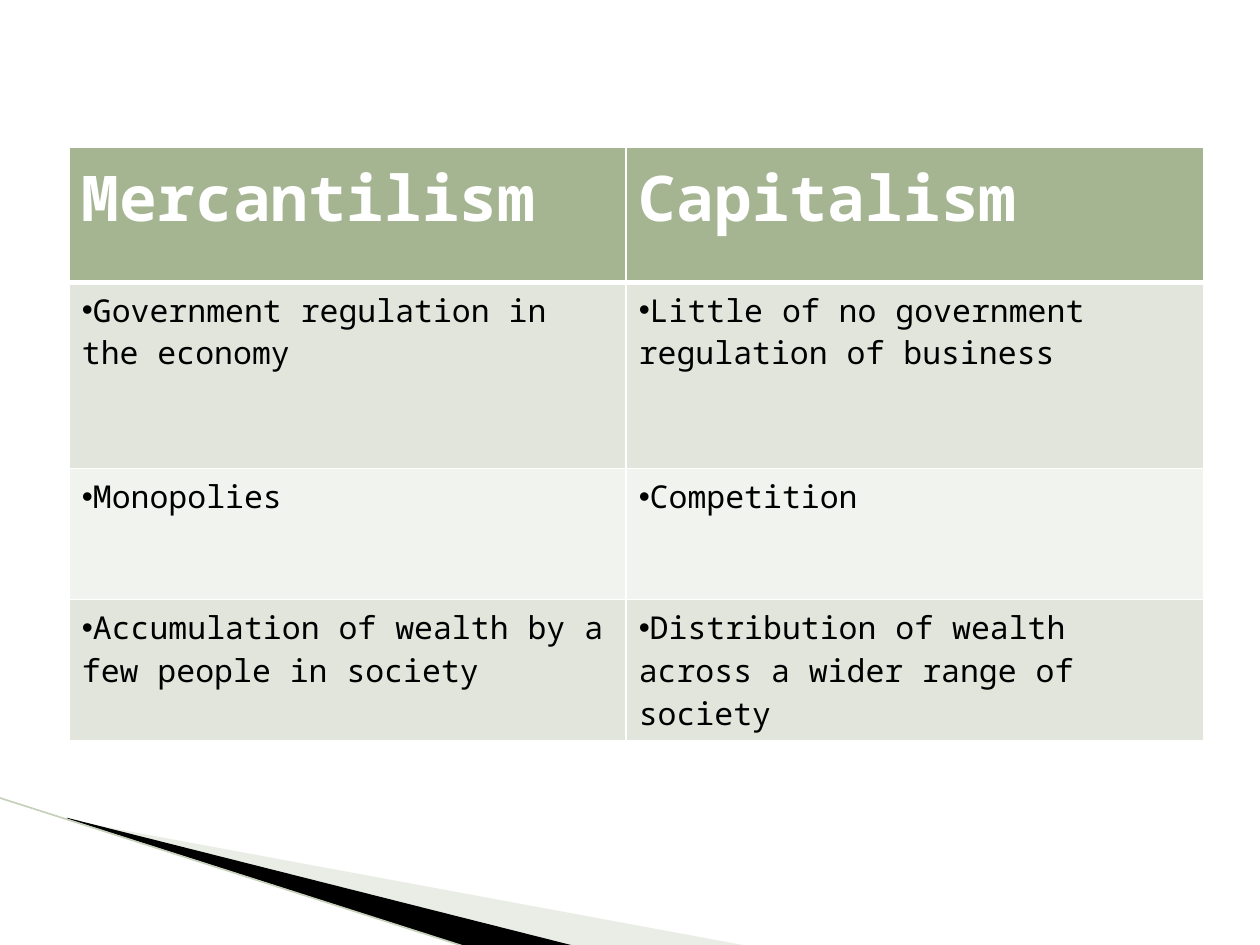
from dataclasses import dataclass

import pptx
import pptx.dml.color
import pptx.enum.shapes
import pptx.oxml
import pptx.oxml.ns
import pptx.util
from lxml import etree

PX = 9144  # EMU in one px, 100 px to the inch


@dataclass(frozen=True)
class Theme:
    font: str = "Noto Sans Mono"
    heading_size: int = 36
    body_size: int = 18
    heading_text: str = "FFFFFF"
    body_text: str = "000000"
    heading_fill: str = "A5B592"
    odd_fill: str = "E1E5DC"
    even_fill: str = "F0F3EE"
    border: str = "FFFFFF"
    pale_wedge: str = "CBD4C0"
    dark_wedge: str = "000000"
    edge: str = "C6D0BB"


@dataclass(frozen=True)
class Wedge:
    points: tuple[tuple[int, int], ...]
    color: str
    opacity: int = 100


@dataclass(frozen=True)
class Row:
    height: int
    mercantilism: str
    capitalism: str


THEME = Theme()
WEDGES = (
    Wedge(((55, 651), (595, 751), (456, 751), (55, 650)), THEME.pale_wedge, 40),
    Wedge(((53, 649), (457, 751), (372, 752), (54, 650)), THEME.dark_wedge),
)
COLUMN_WIDTHS = (442, 458)
ROWS = (
    Row(107, "Mercantilism", "Capitalism"),
    Row(148, "Government regulation in the economy",
        "Little of no government regulation of business"),
    Row(104, "Monopolies", "Competition"),
    Row(104, "Accumulation of wealth by a few people in society",
        "Distribution of wealth across a wider range of society"),
)


def px(length: int) -> pptx.util.Emu:
    return pptx.util.Emu(length * PX)


def rgb(color: str) -> pptx.dml.color.RGBColor:
    return pptx.dml.color.RGBColor.from_string(color)


def add_child(parent, tag: str, **attributes: str):
    return etree.SubElement(parent, pptx.oxml.ns.qn(tag), attributes)


def draw_wedge(slide, wedge: Wedge) -> None:
    first, *others = wedge.points
    builder = slide.shapes.build_freeform(*first, scale=PX)
    builder.add_line_segments(others, close=True)
    outline = builder.convert_to_shape()
    outline.shadow.inherit = False
    outline.line.fill.background()
    outline.fill.solid()
    outline.fill.fore_color.rgb = rgb(wedge.color)
    if wedge.opacity < 100:
        color = outline.fill._xPr.find(".//" + pptx.oxml.ns.qn("a:srgbClr"))
        add_child(color, "a:alpha", val=str(wedge.opacity * 1000))


def draw_edge(slide) -> None:
    edge = slide.shapes.add_connector(
        pptx.enum.shapes.MSO_CONNECTOR.STRAIGHT, px(-1), px(633), px(371), px(752))
    edge.line.color.rgb = rgb(THEME.edge)
    edge.line.width = pptx.util.Pt(0.95)
    add_child(edge._element.spPr, "a:effectLst")


def set_borders(cell, top: int, bottom: int) -> None:
    """Border the cell, with top and bottom widths in points."""
    properties = cell._tc.get_or_add_tcPr()
    for side, width in (("L", 1), ("R", 1), ("T", top), ("B", bottom)):
        line = add_child(properties, f"a:ln{side}", w=str(pptx.util.Pt(width)))
        add_child(add_child(line, "a:solidFill"), "a:srgbClr", val=THEME.border)


def fill_cell(cell, text: str, row_number: int) -> None:
    is_heading = row_number == 0
    set_borders(cell, top=3 if row_number == 1 else 1, bottom=3 if is_heading else 1)
    cell.fill.solid()
    body_fill = THEME.odd_fill if row_number % 2 else THEME.even_fill
    cell.fill.fore_color.rgb = rgb(THEME.heading_fill if is_heading else body_fill)

    paragraph = cell.text_frame.paragraphs[0]
    paragraph.text = text
    if not is_heading:
        properties = paragraph._p.get_or_add_pPr()
        properties.set("marL", "0")
        properties.set("indent", "0")
        add_child(properties, "a:buFont", typeface="Arial")
        add_child(properties, "a:buChar", char="•")
    font = paragraph.runs[0].font
    font.name = THEME.font
    font.size = pptx.util.Pt(THEME.heading_size if is_heading else THEME.body_size)
    font.bold = is_heading
    font.color.rgb = rgb(THEME.heading_text if is_heading else THEME.body_text)


def draw_comparison(slide) -> None:
    height = sum(row.height for row in ROWS)
    comparison = slide.shapes.add_table(
        len(ROWS), len(COLUMN_WIDTHS),
        px(55), px(117), px(sum(COLUMN_WIDTHS)), px(height)).table
    for column, width in zip(comparison.columns, COLUMN_WIDTHS):
        column.width = px(width)
    for row_number, row in enumerate(ROWS):
        comparison.rows[row_number].height = px(row.height)
        for column_number, text in enumerate((row.mercantilism, row.capitalism)):
            fill_cell(comparison.cell(row_number, column_number), text, row_number)


def main() -> None:
    presentation = pptx.Presentation()
    presentation.slide_width = px(1000)
    presentation.slide_height = px(750)
    slide = presentation.slides.add_slide(presentation.slide_layouts[6])
    for wedge in WEDGES:
        draw_wedge(slide, wedge)
    draw_edge(slide)
    draw_comparison(slide)
    presentation.save("out.pptx")


if __name__ == "__main__":
    main()
